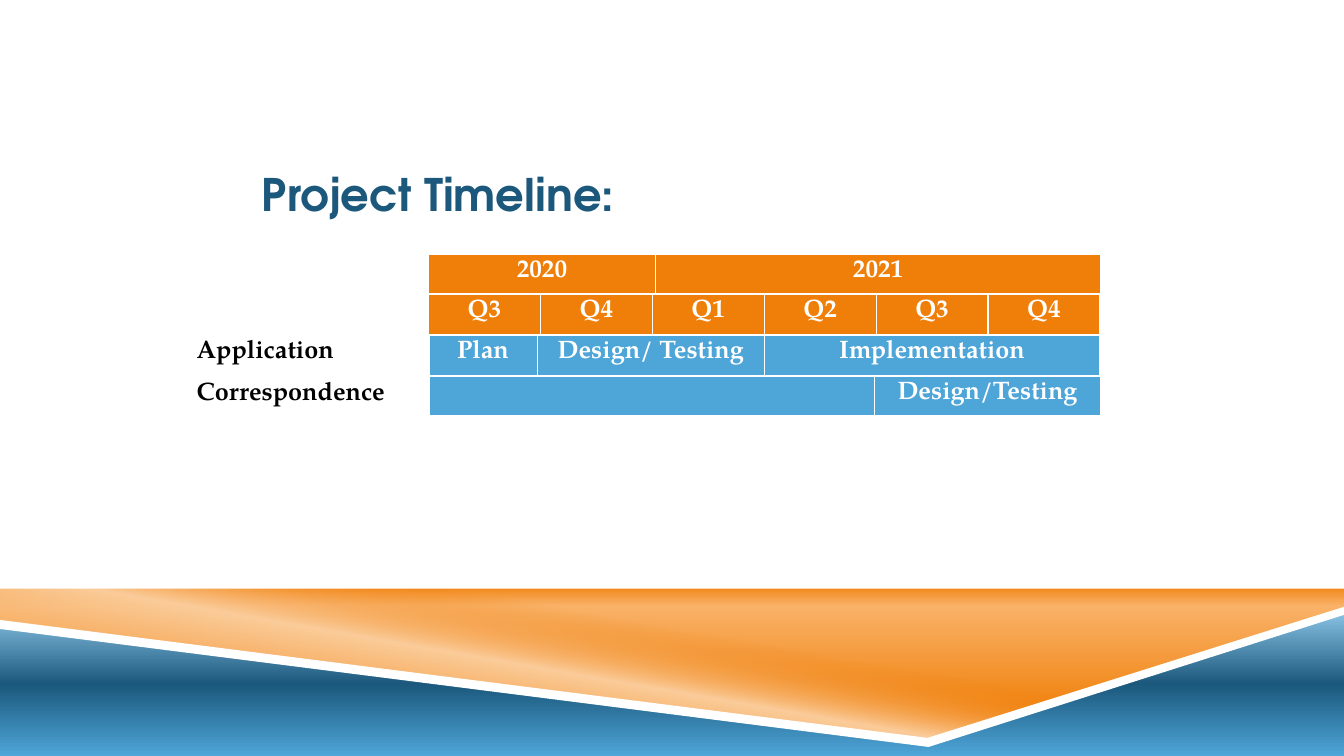
from dataclasses import dataclass

from pptx import Presentation
from pptx.dml.color import RGBColor
from pptx.enum.shapes import MSO_SHAPE
from pptx.enum.text import MSO_AUTO_SIZE, PP_ALIGN
from pptx.oxml import parse_xml
from pptx.oxml.ns import nsdecls
from pptx.util import Pt

PX = 9144  # EMU in one px, 100 px to the inch


@dataclass(frozen=True)
class Theme:
    orange: str = "F07F09"
    peach: str = "F9B268"
    cream: str = "FBCC9A"
    pale: str = "89C3E5"
    sky: str = "4EA5D8"
    navy: str = "1B587C"
    white: str = "FFFFFF"
    black: str = "000000"
    head: str = "TeX Gyre Adventor"
    body: str = "TeX Gyre Pagella"
    title: int = 32
    cell: int = 18


T = Theme()


@dataclass(frozen=True)
class Stop:
    pos: int
    color: str
    alpha: int = 100


@dataclass(frozen=True)
class Band:
    points: list[tuple[int, int]]
    stops: list[Stop]
    angle: int = 90


@dataclass(frozen=True)
class Grid:
    left: int
    top: int
    cols: list[int]
    rows: list[list[str]]
    fill: str | None = None
    color: str = T.white
    align: PP_ALIGN = PP_ALIGN.CENTER


def write(frame, text: str, *, font: str = T.body, size: int = T.cell,
          color: str = T.white, align: PP_ALIGN = PP_ALIGN.LEFT) -> None:
    para = frame.paragraphs[0]
    para.alignment = align
    para.font.size = Pt(size)
    if not text:
        return
    run = para.add_run()
    run.text = text
    run.font.name = font
    run.font.size = Pt(size)
    run.font.bold = True
    run.font.color.rgb = RGBColor.from_string(color)


def paint(shape, stops: list[Stop], angle: int) -> None:
    """Fill a shape with one colour or with a gradient."""
    shape.shadow.inherit = False
    shape.line.fill.background()
    if len(stops) == 1:
        shape.fill.solid()
        shape.fill.fore_color.rgb = RGBColor.from_string(stops[0].color)
        return
    marks = "".join(
        f'<a:gs pos="{s.pos * 1000}"><a:srgbClr val="{s.color}">'
        f'<a:alpha val="{s.alpha * 1000}"/></a:srgbClr></a:gs>' for s in stops)
    grad = parse_xml(
        f'<a:gradFill {nsdecls("a")} rotWithShape="1"><a:gsLst>{marks}</a:gsLst>'
        f'<a:lin ang="{angle * 60000}" scaled="0"/></a:gradFill>')
    shape._element.spPr.insert(2, grad)


def draw_band(slide, band: Band) -> None:
    start, *rest = band.points
    pen = slide.shapes.build_freeform(*start, scale=PX)
    pen.add_line_segments(rest, close=True)
    paint(pen.convert_to_shape(), band.stops, band.angle)


def edge(cell) -> None:
    """Give a cell white borders, thick at the bottom."""
    props = cell._tc.get_or_add_tcPr()
    for side, width in (("L", 1), ("R", 1), ("T", 1), ("B", 3)):
        props.append(parse_xml(
            f'<a:ln{side} {nsdecls("a")} w="{Pt(width)}"><a:solidFill>'
            f'<a:srgbClr val="{T.white}"/></a:solidFill></a:ln{side}>'))


def draw_grid(slide, grid: Grid) -> None:
    high = 41
    table = slide.shapes.add_table(
        len(grid.rows), len(grid.cols), grid.left * PX, grid.top * PX,
        sum(grid.cols) * PX, high * len(grid.rows) * PX).table
    table.first_row = table.horz_banding = False
    for col, width in zip(table.columns, grid.cols):
        col.width = width * PX
    for r, words in enumerate(grid.rows):
        table.rows[r].height = high * PX
        for c, word in enumerate(words):
            cell = table.cell(r, c)
            edge(cell)
            if grid.fill:
                cell.fill.solid()
                cell.fill.fore_color.rgb = RGBColor.from_string(grid.fill)
            else:
                cell.fill.background()
            write(cell.text_frame, word, color=grid.color, align=grid.align)


FLAP = [(0, 580), (1333, 579), (1333, 607), (918, 737), (0, 619)]
BANDS = [
    Band(FLAP, [Stop(0, T.orange), Stop(14, T.peach), Stop(83, T.orange)]),
    Band(FLAP, [Stop(41, T.orange, 0), Stop(57, T.cream), Stop(100, T.orange, 0)], 100),
    Band([(0, 621), (922, 738), (1333, 607), (1334, 750), (0, 750)],
         [Stop(0, T.pale), Stop(50, T.navy), Stop(100, T.sky)]),
]
STRIPE = Band([(0, 615), (920, 732), (1333, 602), (1333, 610), (921, 741), (0, 624)],
              [Stop(0, T.white)])

# Timeline rows: column widths, words, fill
LINES = [
    ([225, 442], ["2020", "2021"], T.orange),
    ([111] * 6, ["Q3", "Q4", "Q1", "Q2", "Q3", "Q4"], T.orange),
    ([108, 225, 333], ["Plan", "Design/ Testing", "Implementation"], T.sky),
    ([442, 225], ["", "Design/Testing"], T.sky),
]


def main() -> None:
    deck = Presentation()
    deck.slide_width, deck.slide_height = 1333 * PX, 750 * PX
    slide = deck.slides.add_slide(deck.slide_layouts[6])

    # Folded ribbon at the foot
    for band in BANDS:
        draw_band(slide, band)
    strip = slide.shapes.add_shape(MSO_SHAPE.RECTANGLE, 0, 576 * PX, 1333 * PX, 8 * PX)
    paint(strip, [Stop(0, T.white)], 0)
    draw_band(slide, STRIPE)

    # Title
    box = slide.shapes.add_textbox(250 * PX, 161 * PX, 867 * PX, 64 * PX)
    box.text_frame.word_wrap = True
    box.text_frame.auto_size = MSO_AUTO_SIZE.SHAPE_TO_FIT_TEXT
    write(box.text_frame, "Project Timeline:", font=T.head, size=T.title, color=T.navy)

    # Timeline and its labels
    for i, (cols, words, fill) in enumerate(LINES):
        draw_grid(slide, Grid(425, 252 + i * 81 // 2, cols, [words], fill))
    draw_grid(slide, Grid(185, 333, [241], [["Application"], ["Correspondence"], [""]],
                          color=T.black, align=PP_ALIGN.LEFT))

    deck.save("out.pptx")


if __name__ == "__main__":
    main()
